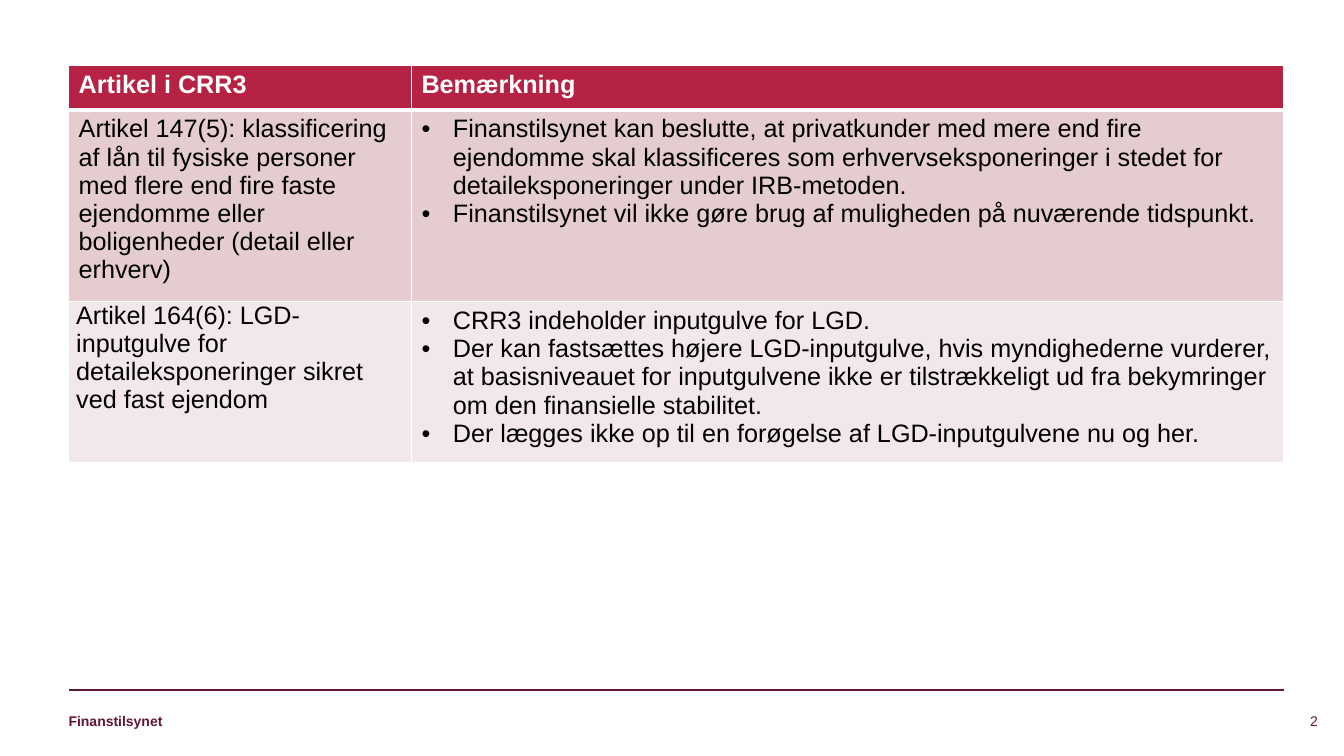
from dataclasses import dataclass

from lxml import etree
from pptx import Presentation
from pptx import util as u
from pptx.dml.color import RGBColor
from pptx.enum import shapes, text
from pptx.oxml import ns

WHITE = RGBColor(0xFF, 0xFF, 0xFF)
BLACK = RGBColor(0, 0, 0)
PLUM = RGBColor(0x63, 0x16, 0x3A)
CRIMSON = RGBColor(0xB5, 0x22, 0x44)
ROSE = RGBColor(0xE5, 0xCD, 0xCF)
BLUSH = RGBColor(0xF3, 0xE8, 0xE9)

FONT = "Arial"
LEFT, RIGHT = u.Cm(1.73), u.Cm(32.36)
SLIDE_WIDTH = u.Cm(33.87)
BULLET_INDENT = u.Cm(0.79)


@dataclass
class ArticleRow:
    article: str
    remarks: list[str]
    height: float
    fill: RGBColor
    color: RGBColor = BLACK
    header: bool = False
    tight: bool = False  # article cell with narrow margins
    top_border: float = 1
    bottom_border: float = 1


@dataclass
class FooterText:
    wording: str
    left: int
    width: int
    align: text.PP_ALIGN
    bold: bool


ROWS = [
    ArticleRow("Artikel i CRR3", ["Bemærkning"], 1.11, CRIMSON, WHITE,
               header=True, bottom_border=3),
    ArticleRow(
        "Artikel 147(5): klassificering af lån til fysiske personer med flere end "
        "fire faste ejendomme eller boligenheder (detail eller erhverv)",
        ["Finanstilsynet kan beslutte, at privatkunder med mere end fire ejendomme "
         "skal klassificeres som erhvervseksponeringer i stedet for "
         "detaileksponeringer under IRB-metoden.",
         "Finanstilsynet vil ikke gøre brug af muligheden på nuværende tidspunkt."],
        4.52, ROSE, top_border=3),
    ArticleRow(
        "Artikel 164(6): LGD-inputgulve for detaileksponeringer sikret ved fast ejendom",
        ["CRR3 indeholder inputgulve for LGD.",
         "Der kan fastsættes højere LGD-inputgulve, hvis myndighederne vurderer, at "
         "basisniveauet for inputgulvene ikke er tilstrækkeligt ud fra bekymringer om "
         "den finansielle stabilitet.",
         "Der lægges ikke op til en forøgelse af LGD-inputgulvene nu og her."],
        3.8, BLUSH, tight=True),
]

FOOTERS = [
    FooterText("Finanstilsynet", LEFT, u.Cm(7.01), text.PP_ALIGN.LEFT, True),
    FooterText("2", RIGHT, SLIDE_WIDTH - RIGHT, text.PP_ALIGN.CENTER, False),
]


def set_font(paragraph, size: float, color: RGBColor, bold: bool) -> None:
    font = paragraph.font
    font.name, font.size, font.bold = FONT, u.Pt(size), bold
    font.color.rgb = color


def add_bullet(paragraph) -> None:
    properties = paragraph._p.get_or_add_pPr()
    properties.set("marL", str(BULLET_INDENT))
    properties.set("indent", str(-BULLET_INDENT))
    bullet_font = etree.Element(ns.qn("a:buFont"), typeface=FONT)
    bullet = etree.Element(ns.qn("a:buChar"), char="•")
    properties.insert(0, bullet_font)
    properties.insert(1, bullet)


def add_borders(cell, top: float, bottom: float) -> None:
    properties = cell._tc.get_or_add_tcPr()
    for side, width in (("L", 1), ("R", 1), ("T", top), ("B", bottom)):
        border = etree.SubElement(properties, ns.qn(f"a:ln{side}"), w=str(u.Pt(width)))
        paint = etree.SubElement(border, ns.qn("a:solidFill"))
        etree.SubElement(paint, ns.qn("a:srgbClr"), val=str(WHITE))


def fill_cell(cell, row: ArticleRow, lines: list[str], bulleted: bool) -> None:
    add_borders(cell, row.top_border, row.bottom_border)
    cell.fill.solid()
    cell.fill.fore_color.rgb = row.fill
    cell.text_frame.text = "\n".join(lines)
    for paragraph in cell.text_frame.paragraphs:
        set_font(paragraph, 18, row.color, row.header)
        if bulleted:
            add_bullet(paragraph)


def add_article_table(slide) -> None:
    height = u.Cm(sum(row.height for row in ROWS))
    table = slide.shapes.add_table(len(ROWS), 2, LEFT, u.Cm(1.66),
                                   RIGHT - LEFT, height).table
    article_width = u.Cm(8.64)
    table.columns[0].width = article_width
    table.columns[1].width = RIGHT - LEFT - article_width
    for index, row in enumerate(ROWS):
        table.rows[index].height = u.Cm(row.height)
        article, remarks = table.cell(index, 0), table.cell(index, 1)
        fill_cell(article, row, [row.article], False)
        fill_cell(remarks, row, row.remarks, not row.header)
        if row.tight:
            article.margin_left = article.margin_right = u.Cm(0.19)
            article.margin_top = article.margin_bottom = 0


def add_footer_text(slide, footer: FooterText) -> None:
    frame = slide.shapes.add_textbox(footer.left, u.Cm(17.88),
                                     footer.width, u.Cm(0.51)).text_frame
    frame.margin_left = frame.margin_right = frame.margin_top = frame.margin_bottom = 0
    frame.word_wrap = True
    frame.vertical_anchor = text.MSO_ANCHOR.BOTTOM
    paragraph = frame.paragraphs[0]
    paragraph.text = footer.wording
    paragraph.alignment = footer.align
    set_font(paragraph, 10, PLUM, footer.bold)


def add_footer_rule(slide) -> None:
    y = u.Cm(17.39)
    rule = slide.shapes.add_connector(shapes.MSO_CONNECTOR.STRAIGHT, LEFT, y, RIGHT, y)
    rule.line.color.rgb = PLUM
    rule.line.width = u.Pt(1.25)
    etree.SubElement(rule._element.spPr, ns.qn("a:effectLst"))


def main() -> None:
    deck = Presentation()
    deck.slide_width, deck.slide_height = SLIDE_WIDTH, u.Cm(19.05)
    slide = deck.slides.add_slide(deck.slide_layouts[6])

    # Footer
    add_footer_rule(slide)
    for footer in FOOTERS:
        add_footer_text(slide, footer)

    # Articles and remarks
    add_article_table(slide)

    deck.save("out.pptx")


if __name__ == "__main__":
    main()
